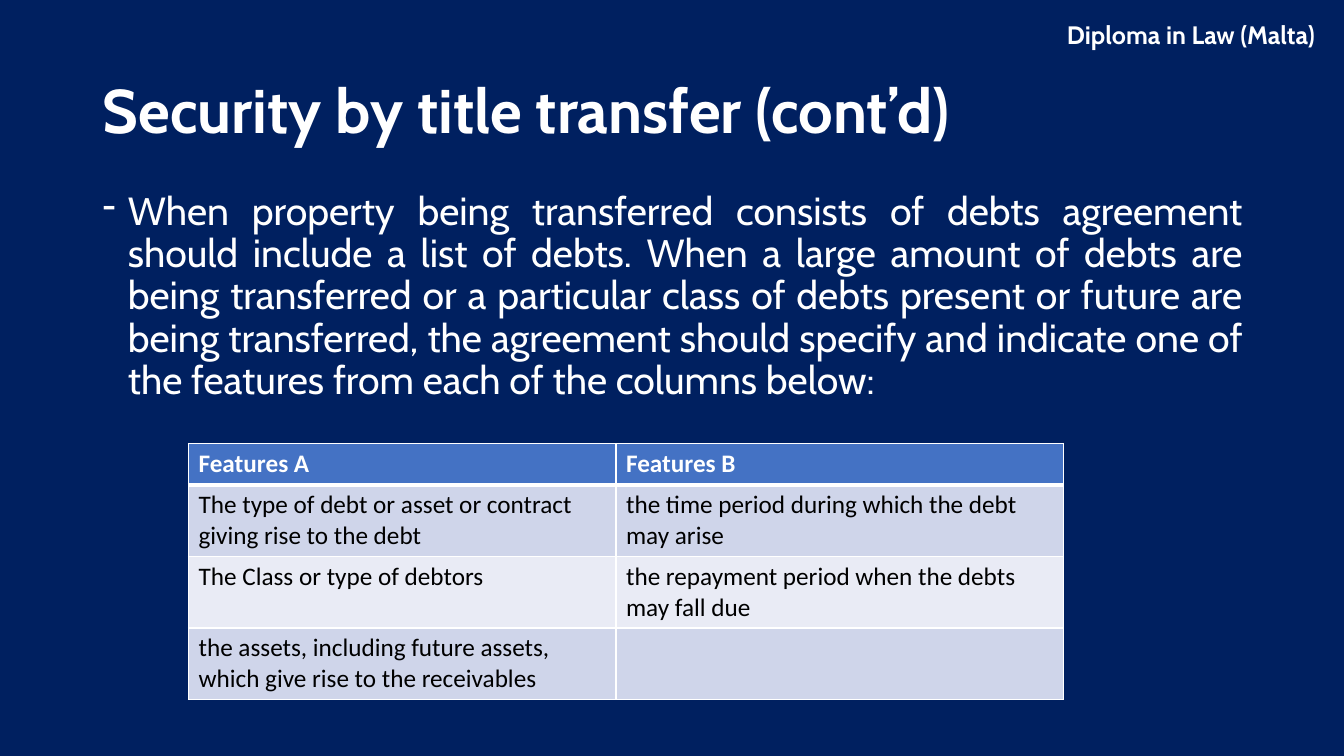
"""Build the slide on security by title transfer, with its table of debt features."""
from dataclasses import dataclass, field
from typing import Any

from lxml.etree import SubElement
from pptx import Presentation
from pptx.dml.color import RGBColor
from pptx.enum.shapes import MSO_SHAPE
from pptx.enum.text import MSO_ANCHOR, PP_ALIGN
from pptx.oxml.ns import qn
from pptx.slide import Slide
from pptx.table import _Cell
from pptx.util import Inches, Pt

COLORS = {
    "navy": "002060",
    "white": "FFFFFF",
    "black": "000000",
    "header": "4472C4",
    "odd": "CFD5EA",
    "even": "E9EBF5",
}
PAGE_WIDTH, PAGE_HEIGHT = 13.33, 7.5


@dataclass(frozen=True)
class TextBlock:
    text: str
    left: float
    top: float
    width: float
    height: float
    font: dict[str, Any]
    frame: dict[str, Any] = field(default_factory=dict)
    paragraph: dict[str, Any] = field(default_factory=dict)
    bullet: str = ""


TEXT_BLOCKS = [
    TextBlock("Diploma in Law (Malta)", 8.39, 0.14, 4.75, 0.4,
              {"size": Pt(18), "bold": True},
              paragraph={"alignment": PP_ALIGN.RIGHT}),
    TextBlock("Security by title transfer (cont’d)", 0.92, 0.4, 11.5, 1.45,
              {"size": Pt(44), "bold": True},
              frame={"vertical_anchor": MSO_ANCHOR.MIDDLE},
              paragraph={"line_spacing": 0.9}),
    TextBlock("When property being transferred consists of debts agreement should "
              "include a list of debts. When a large amount of debts are being "
              "transferred or a particular class of debts present or future are being "
              "transferred, the agreement should specify and indicate one of the "
              "features from each of the columns below:", 0.92, 1.85, 11.5, 2.4,
              {"size": Pt(28)},
              paragraph={"alignment": PP_ALIGN.JUSTIFY, "line_spacing": 0.9},
              bullet="-"),
]

FEATURES = [
    ("Features A", "Features B"),
    ("The type of debt or asset or contract giving rise to the debt",
     "the time period during which the debt may arise"),
    ("The Class or type of debtors",
     "the repayment period when the debts may fall due"),
    ("the assets, including future assets, which give rise to the receivables", ""),
]
COLUMN_WIDTHS = (4.24, 4.44)
HEADER_HEIGHT, ROW_HEIGHT = 0.41, 0.71


def color(name: str) -> RGBColor:
    return RGBColor.from_string(COLORS[name])


def apply_format(target: Any, values: dict[str, Any]) -> None:
    for name, value in values.items():
        setattr(target, name, value)


def draw_background(page: Slide) -> None:
    panel = page.shapes.add_shape(
        MSO_SHAPE.RECTANGLE, 0, 0, Inches(PAGE_WIDTH), Inches(PAGE_HEIGHT))
    panel.shadow.inherit = False
    panel.fill.solid()
    panel.fill.fore_color.rgb = color("navy")
    panel.line.color.rgb = color("navy")


def draw_text(page: Slide, block: TextBlock) -> None:
    box = page.shapes.add_textbox(
        Inches(block.left), Inches(block.top), Inches(block.width), Inches(block.height))
    apply_format(box.text_frame, {"word_wrap": True, **block.frame})
    paragraph = box.text_frame.paragraphs[0]
    if block.bullet:
        properties = paragraph._p.get_or_add_pPr()
        properties.set("marL", str(Inches(0.25)))
        properties.set("indent", str(-Inches(0.25)))
        SubElement(properties, qn("a:buChar"), char=block.bullet)
    apply_format(paragraph, block.paragraph)
    span = paragraph.add_run()
    span.text = block.text
    apply_format(span.font, {"name": "Cabin", **block.font})
    span.font.color.rgb = color("white")


def draw_borders(cell: _Cell, widths: dict[str, float]) -> None:
    properties = cell._tc.get_or_add_tcPr()
    for side, width in widths.items():
        line = SubElement(properties, qn(f"a:ln{side}"), w=str(Pt(width)))
        fill = SubElement(line, qn("a:solidFill"))
        SubElement(fill, qn("a:srgbClr"), val=COLORS["white"])


def fill_cell(cell: _Cell, text: str, row: int) -> None:
    header = row == 0
    draw_borders(cell, {"L": 1, "R": 1, "T": 3 if row == 1 else 1, "B": 3 if header else 1})
    cell.fill.solid()
    cell.fill.fore_color.rgb = color("header" if header else "odd" if row % 2 else "even")
    if text:
        span = cell.text_frame.paragraphs[0].add_run()
        span.text = text
        apply_format(span.font, {"name": "Calibri", "size": Pt(18), "bold": header})
        span.font.color.rgb = color("white" if header else "black")


def draw_features(page: Slide) -> None:
    heights = [HEADER_HEIGHT] + [ROW_HEIGHT] * (len(FEATURES) - 1)
    table = page.shapes.add_table(
        len(FEATURES), len(COLUMN_WIDTHS), Inches(1.87), Inches(4.4),
        Inches(sum(COLUMN_WIDTHS)), Inches(sum(heights))).table
    for column, width in zip(table.columns, COLUMN_WIDTHS):
        column.width = Inches(width)
    for row, (height, texts) in enumerate(zip(heights, FEATURES)):
        table.rows[row].height = Inches(height)
        for column, text in enumerate(texts):
            fill_cell(table.cell(row, column), text, row)


def main() -> None:
    deck = Presentation()
    deck.slide_width, deck.slide_height = Inches(PAGE_WIDTH), Inches(PAGE_HEIGHT)
    page = deck.slides.add_slide(deck.slide_layouts[6])
    draw_background(page)
    for block in TEXT_BLOCKS:
        draw_text(page, block)
    draw_features(page)
    deck.save("out.pptx")


if __name__ == "__main__":
    main()
